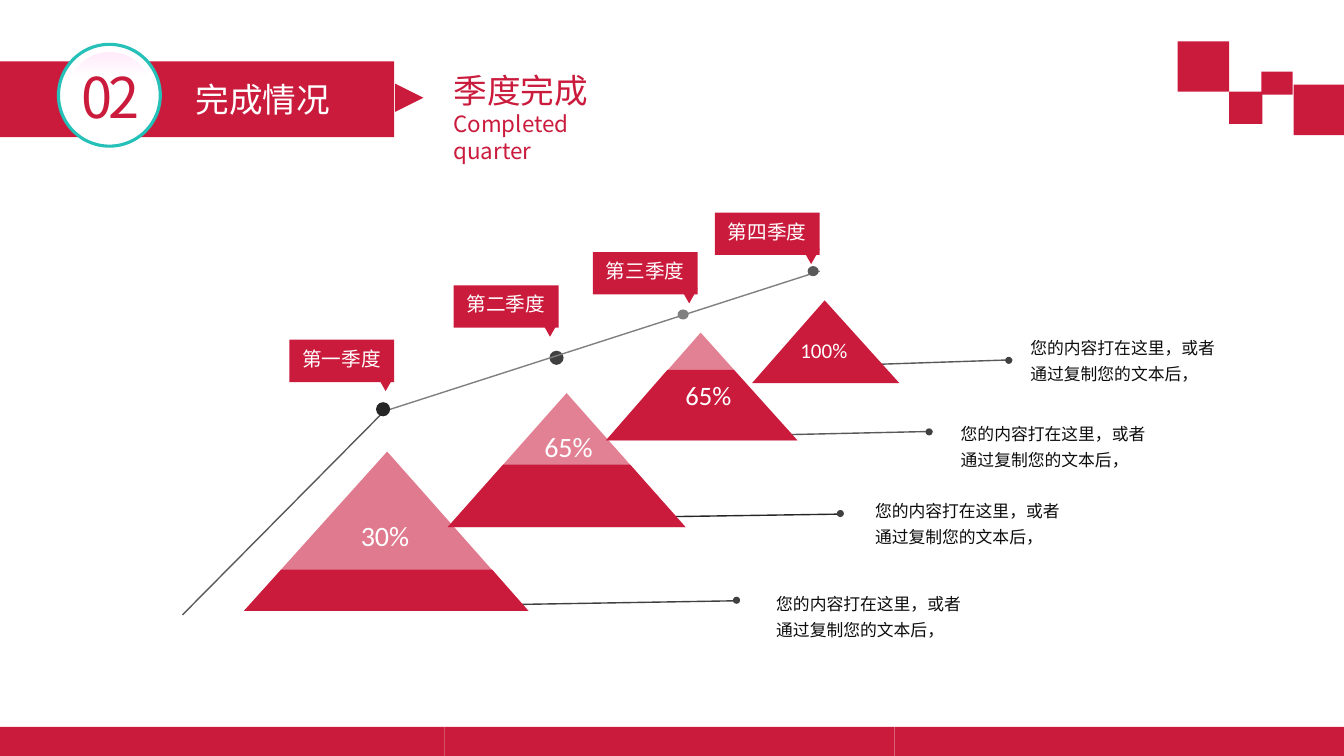
from dataclasses import dataclass

from lxml.etree import SubElement
from pptx import Presentation
from pptx.dml.color import RGBColor
from pptx.enum.shapes import MSO_CONNECTOR as Connector, MSO_SHAPE as Shape
from pptx.oxml.ns import qn
from pptx.util import Pt

PX = 9144


@dataclass(frozen=True)
class Theme:
    """Colours, fonts and type sizes of the deck."""
    red: str = "CB1B3D"
    white: str = "FFFFFF"
    ink: str = "0D0D0D"
    teal: str = "25C0B7"
    blush: str = "FFEBFA"
    black: str = "262626"
    dark: str = "404040"
    grey: str = "595959"
    light: str = "808080"
    chinese: str = "Noto Sans CJK SC"
    latin: str = "Calibri"
    number: int = 40
    title: int = 24
    subtitle: int = 16
    tag: int = 14
    note: int = 12


@dataclass(frozen=True)
class Quarter:
    """One peak; every point is an offset from the peak's box."""
    box: tuple
    apex: int
    band: int
    alpha: int
    percent: str
    percent_size: int
    percent_at: tuple
    line_from: tuple
    line_to: tuple
    dot_at: tuple
    note_at: tuple
    line_color: str


THEME = Theme()
NOTE = "您的内容打在这里，或者通过复制您的文本后，"
QUARTERS = [
    Quarter((746, 298, 146, 82), 72, 0, 100, "100%", 15, (38, 32),
            (108, 64), (258, 59), (251, 56), (266, 26), THEME.grey),
    Quarter((601, 330, 190, 107), 94, 37, 55, "65%", 19, (69, 41),
            (145, 102), (324, 98), (317, 95), (342, 79), THEME.grey),
    Quarter((444, 390, 236, 133), 118, 71, 55, "65%", 20, (86, 31),
            (191, 123), (391, 120), (386, 116), (414, 96), THEME.black),
    Quarter((242, 448, 282, 158), 142, 117, 58, "30%", 20, (106, 61),
            (251, 152), (490, 148), (485, 144), (518, 130), THEME.dark),
]
TAGS = [("第一季度", 287, 337), ("第二季度", 450, 283),
        ("第三季度", 588, 250), ("第四季度", 709, 211)]


def px(*values):
    """Turn px lengths into EMU."""
    return [round(value * PX) for value in values]


def paint(shape, color, alpha=100):
    """Give a shape a flat fill without line or shadow."""
    shape.shadow.inherit = False
    shape.line.fill.background()
    shape.fill.solid()
    shape.fill.fore_color.rgb = RGBColor.from_string(color)
    if alpha < 100:
        solid = shape.fill._xPr.find(qn("a:solidFill"))
        SubElement(solid[0], qn("a:alpha"), val=str(alpha * 1000))
    return shape


def add_preset(slide, kind, box, color, rotation=0):
    """Add a filled preset shape."""
    shape = paint(slide.shapes.add_shape(kind, *px(*box)), color)
    shape.rotation = rotation
    return shape


def add_polygon(slide, points, color, alpha=100):
    """Add a filled closed outline."""
    builder = slide.shapes.build_freeform(*points[0], scale=PX)
    builder.add_line_segments(points[1:], close=True)
    return paint(builder.convert_to_shape(), color, alpha)


def add_line(slide, start, end, color):
    """Add a thin line without shadow."""
    line = slide.shapes.add_connector(Connector.STRAIGHT, *px(*start, *end))
    line.line.color.rgb = RGBColor.from_string(color)
    line.line.width = Pt(1)
    SubElement(line._element.spPr, qn("a:effectLst"))


def add_text(slide, box, text, sizes, color, font=THEME.chinese, spacing=None):
    """Add a text box with one type size per paragraph."""
    frame = slide.shapes.add_textbox(*px(*box)).text_frame
    frame.word_wrap = True
    frame.text = text
    for paragraph, size in zip(frame.paragraphs, sizes):
        paragraph.line_spacing = spacing
        for run in paragraph.runs:
            run.font.size = Pt(size)
            run.font.color.rgb = RGBColor.from_string(color)
            run.font.name = font
            SubElement(run._r.get_or_add_rPr(), qn("a:ea"), typeface=font)
    return frame


def add_quarter(slide, quarter):
    """Draw a peak with its percentage, leader line and note."""
    left, top, width, height = quarter.box

    def at(point):
        """Place an offset on the slide."""
        return left + point[0], top + point[1]

    add_line(slide, at(quarter.line_from), at(quarter.line_to), quarter.line_color)
    add_preset(slide, Shape.OVAL, (*at(quarter.dot_at), 7, 7), THEME.dark)
    add_text(slide, (*at(quarter.note_at), 215, 63), NOTE, [THEME.note],
             THEME.ink, spacing=1.3)
    corners = [at((width, height)), at((0, height))]
    if quarter.band:
        add_polygon(slide, corners + [at((quarter.apex, 0))], THEME.red, quarter.alpha)
    share = quarter.band / height
    band_left = round(quarter.apex * (1 - share))
    band_right = round(quarter.apex + (width - quarter.apex) * share)
    add_polygon(slide, corners + [at((band_left, quarter.band)),
                                  at((band_right, quarter.band))], THEME.red)
    add_text(slide, (*at(quarter.percent_at), 70, 44), quarter.percent,
             [quarter.percent_size], THEME.white, THEME.latin)


def add_trend(slide, left, top):
    """Draw the rising line and its four markers."""
    bend = (left + 200, top + 144)
    add_preset(slide, Shape.OVAL, (left + 364, top + 84, 14, 14), THEME.dark)
    add_line(slide, (left + 632, top + 5), bend, THEME.light)
    add_line(slide, bend, (left, top + 346), THEME.grey)
    add_preset(slide, Shape.OVAL, (left + 192, top + 135, 14, 14), THEME.black)
    add_preset(slide, Shape.OVAL, (left + 491, top + 43, 11, 10), THEME.light)
    add_preset(slide, Shape.OVAL, (left + 620, top, 11, 10), THEME.grey)


def add_tag(slide, text, left, top):
    """Draw a quarter name with its pointer."""
    add_preset(slide, Shape.RECTANGLE, (left, top, 104, 42), THEME.red)
    add_preset(slide, Shape.ISOSCELES_TRIANGLE, (left + 87, top + 36, 17, 15),
               THEME.red, 180)
    add_text(slide, (left + 3, top + 2, 99, 34), text, [THEME.tag], THEME.white)


def add_header(slide, left, top):
    """Draw the section banner, number badge and titles."""
    add_preset(slide, Shape.RECTANGLE, (left, top, 394, 75), THEME.red)
    add_preset(slide, Shape.ISOSCELES_TRIANGLE, (left + 395, top + 22, 28, 28),
               THEME.red, 90)
    ring = add_preset(slide, Shape.OVAL, (left + 61, top - 17, 101, 101), THEME.white)
    ring.line.color.rgb = RGBColor.from_string(THEME.teal)
    ring.line.width = Pt(2.25)
    disc = add_preset(slide, Shape.OVAL, (left + 69, top - 9, 86, 86), THEME.white)
    disc.fill.gradient()
    disc.fill.gradient_angle = 90
    stops = zip(disc.fill.gradient_stops, (0.7, 1), (THEME.white, THEME.blush))
    for stop, position, color in stops:
        stop.position = position
        stop.color.rgb = RGBColor.from_string(color)
    number = add_text(slide, (left + 74, top - 4, 97, 77), "02",
                      [THEME.number], THEME.red)
    number.paragraphs[0].runs[0]._r.get_or_add_rPr().set("spc", "-300")
    add_text(slide, (left + 187, top + 12, 208, 50), "完成情况",
             [THEME.title], THEME.white)
    add_text(slide, (left + 443, top + 3, 211, 77), "季度完成\nCompleted quarter",
             [THEME.title, THEME.subtitle], THEME.red)


def add_decoration(slide, left, top):
    """Draw the corner blocks and the footer bars."""
    for dx, dy, width, height in [(115, 43, 51, 50), (0, 0, 51, 50),
                                  (51, 50, 33, 32), (83, 30, 31, 23)]:
        add_preset(slide, Shape.RECTANGLE, (left + dx, top + dy, width, height), THEME.red)
    for column in range(3):
        add_preset(slide, Shape.RECTANGLE, (446 * column - 5, 721, 446, 29), THEME.red)


def main():
    """Build and save the slide."""
    presentation = Presentation()
    presentation.slide_width, presentation.slide_height = px(1333, 750)
    slide = presentation.slides.add_slide(presentation.slide_layouts[6])
    add_trend(slide, 181, 264)
    for quarter in QUARTERS:
        add_quarter(slide, quarter)
    for tag in TAGS:
        add_tag(slide, *tag)
    add_header(slide, -3, 61)
    add_decoration(slide, 1168, 41)
    presentation.save("out.pptx")


if __name__ == "__main__":
    main()
